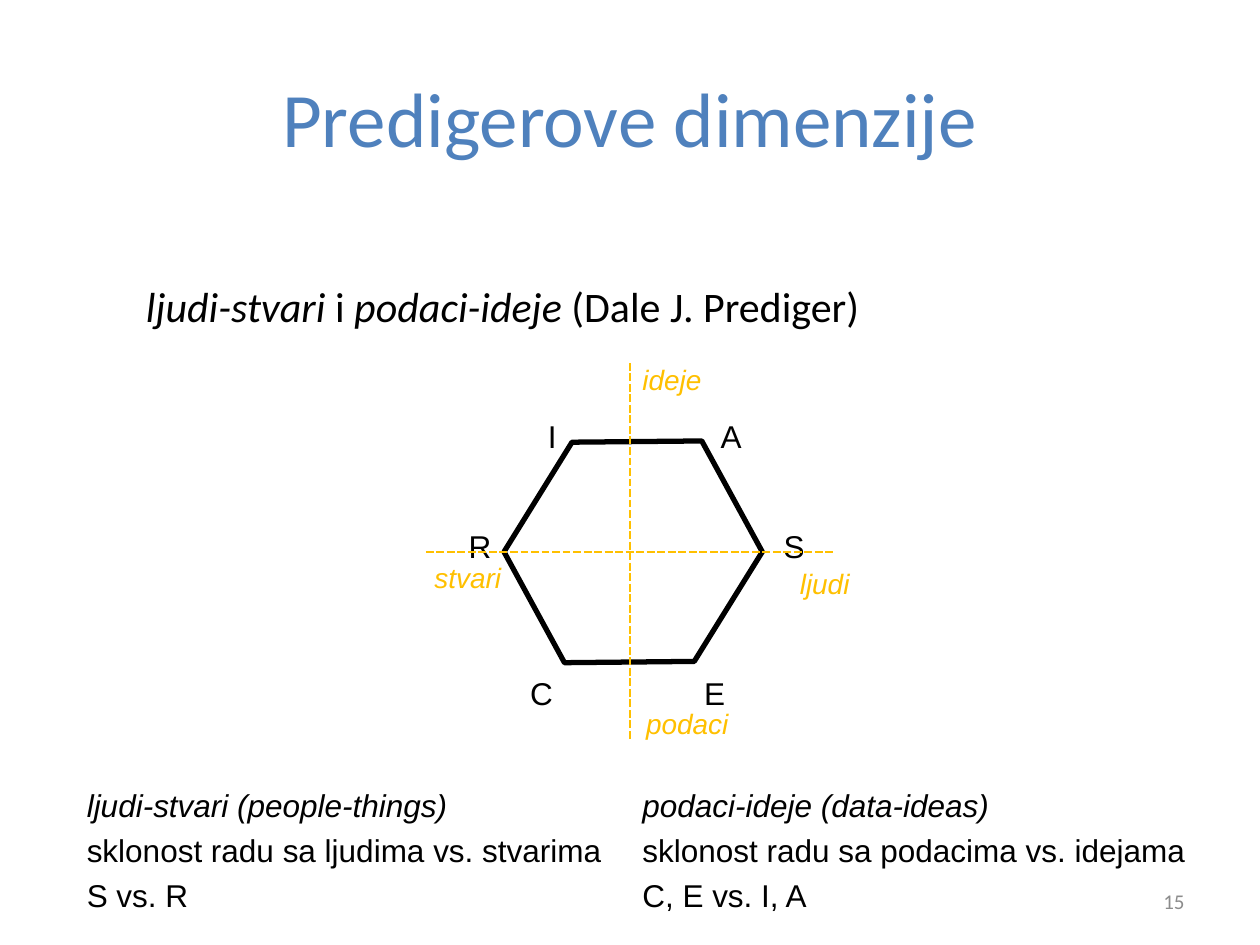
from dataclasses import dataclass

from lxml.etree import SubElement
from pptx import Presentation
from pptx.dml.color import RGBColor
from pptx.enum.dml import MSO_LINE
from pptx.enum.shapes import MSO_CONNECTOR
from pptx.enum.text import MSO_ANCHOR, PP_ALIGN
from pptx.oxml.ns import qn
from pptx.util import Inches, Pt


@dataclass(frozen=True)
class Theme:
    title: RGBColor = RGBColor(0x4F, 0x81, 0xBD)
    text: RGBColor = RGBColor(0, 0, 0)
    axis: RGBColor = RGBColor(0xFF, 0xC0, 0)
    muted: RGBColor = RGBColor(0x8C, 0x8C, 0x8C)
    head: str = "Calibri"
    body: str = "Arial"
    title_size: Pt = Pt(44)
    lead_size: Pt = Pt(24)
    body_size: Pt = Pt(18)
    axis_size: Pt = Pt(16)
    number_size: Pt = Pt(12)


THEME = Theme()
TITLE = dict(name=THEME.head, size=THEME.title_size, color=THEME.title)
LEAD = dict(name=THEME.head, size=THEME.lead_size, color=THEME.text)
BODY = dict(name=THEME.body, size=THEME.body_size, color=THEME.text)
AXIS = dict(name=THEME.body, size=THEME.axis_size, color=THEME.axis, italic=True)
NUMBER = dict(name=THEME.head, size=THEME.number_size, color=THEME.muted)

HEXAGON = [(5.57, 3.5), (4.54, 3.51), (4, 4.38), (4.48, 5.26), (5.51, 5.25), (6.05, 4.38)]
LETTERS = [("R", 3.62, 4.13), ("I", 4.25, 3.26), ("A", 5.62, 3.26),
           ("S", 6.12, 4.13), ("E", 5.49, 5.3), ("C", 4.11, 5.3)]
POLES = [("podaci", 5.03, 5.56, 0.86), ("stvari", 3.35, 4.4, 0.73),
         ("ideje", 5, 2.83, 0.67), ("ljudi", 6.25, 4.45, 0.6)]
AXES = [((3.38, 4.38), (6.62, 4.38)), ((5, 2.88), (5, 5.88))]
NOTES = [
    (0.59, 4.41, ["ljudi-stvari (people-things)",
                  "sklonost radu sa ljudima vs. stvarima", "S vs. R"]),
    (5, 5, ["podaci-ideje (data-ideas)",
            "sklonost radu sa podacima vs. idejama", "C, E vs. I, A"]),
]


def add_run(p, text, fmt, **extra):
    r = p.add_run()
    r.text = text
    for key, value in {**fmt, **extra}.items():
        if key == "color":
            r.font.color.rgb = value
        else:
            setattr(r.font, key, value)


def add_box(s, x, y, w, h, wrap=True):
    tf = s.shapes.add_textbox(Inches(x), Inches(y), Inches(w), Inches(h)).text_frame
    tf.word_wrap = wrap
    return tf


def add_label(s, text, x, y, w, h, fmt, wrap=True):
    tf = add_box(s, x, y, w, h, wrap)
    add_run(tf.paragraphs[0], text, fmt)
    return tf


def add_title(s, text):
    sp = s.shapes.title
    sp.left, sp.top, sp.width, sp.height = map(Inches, (0.5, 0.3, 9, 1.25))
    tf = sp.text_frame
    tf.vertical_anchor = MSO_ANCHOR.MIDDLE
    p = tf.paragraphs[0]
    p.alignment = PP_ALIGN.CENTER
    add_run(p, text, TITLE)


def add_lead(s, parts):
    p = add_box(s, 1.06, 2.18, 8.44, 1.18).paragraphs[0]
    p.space_before = Pt(5)
    for text, italic in parts:
        add_run(p, text, LEAD, italic=italic)


def add_hexagon(s):
    start, *rest = [(Inches(x), Inches(y)) for x, y in HEXAGON]
    builder = s.shapes.build_freeform(*start)
    builder.add_line_segments(rest, close=True)
    sp = builder.convert_to_shape()
    sp.shadow.inherit = False
    sp.fill.background()
    sp.line.color.rgb = THEME.text
    sp.line.width = Pt(3)


def add_axis(s, begin, end):
    line = s.shapes.add_connector(MSO_CONNECTOR.STRAIGHT, *map(Inches, begin + end))
    line.line.color.rgb = THEME.axis
    line.line.width = Pt(1.5)
    line.line.dash_style = MSO_LINE.SQUARE_DOT
    SubElement(line._element.spPr, qn("a:effectLst"))


def add_note(s, x, w, lines):
    tf = add_box(s, x, 6.19, w, 1.12)
    for i, text in enumerate(lines):
        p = tf.add_paragraph() if i else tf.paragraphs[0]
        p.space_before = Pt(4)
        add_run(p, text, BODY, italic=i == 0)


def main():
    prs = Presentation()
    prs.slide_width, prs.slide_height = Inches(10), Inches(7.5)
    s = prs.slides.add_slide(prs.slide_layouts[5])

    # Heading and lead line
    add_title(s, "Predigerove dimenzije")
    add_lead(s, [("ljudi-stvari ", True), ("i ", False),
                 ("podaci-ideje ", True), ("(Dale J. Prediger)", False)])

    # Hexagon with its corner letters, axes and poles
    add_hexagon(s)
    for text, x, y in LETTERS:
        add_label(s, text, x, y, 0.38, 0.38, BODY)
    for begin, end in AXES:
        add_axis(s, begin, end)
    for text, x, y, w in POLES:
        add_label(s, text, x, y, w, 0.37, AXIS, wrap=False)

    # Explanations of the two dimensions
    for x, w, lines in NOTES:
        add_note(s, x, w, lines)

    # Slide number
    tf = add_label(s, "15", 7.17, 6.95, 2.33, 0.4, NUMBER)
    tf.vertical_anchor = MSO_ANCHOR.MIDDLE
    tf.paragraphs[0].alignment = PP_ALIGN.RIGHT

    prs.save("out.pptx")


if __name__ == "__main__":
    main()
